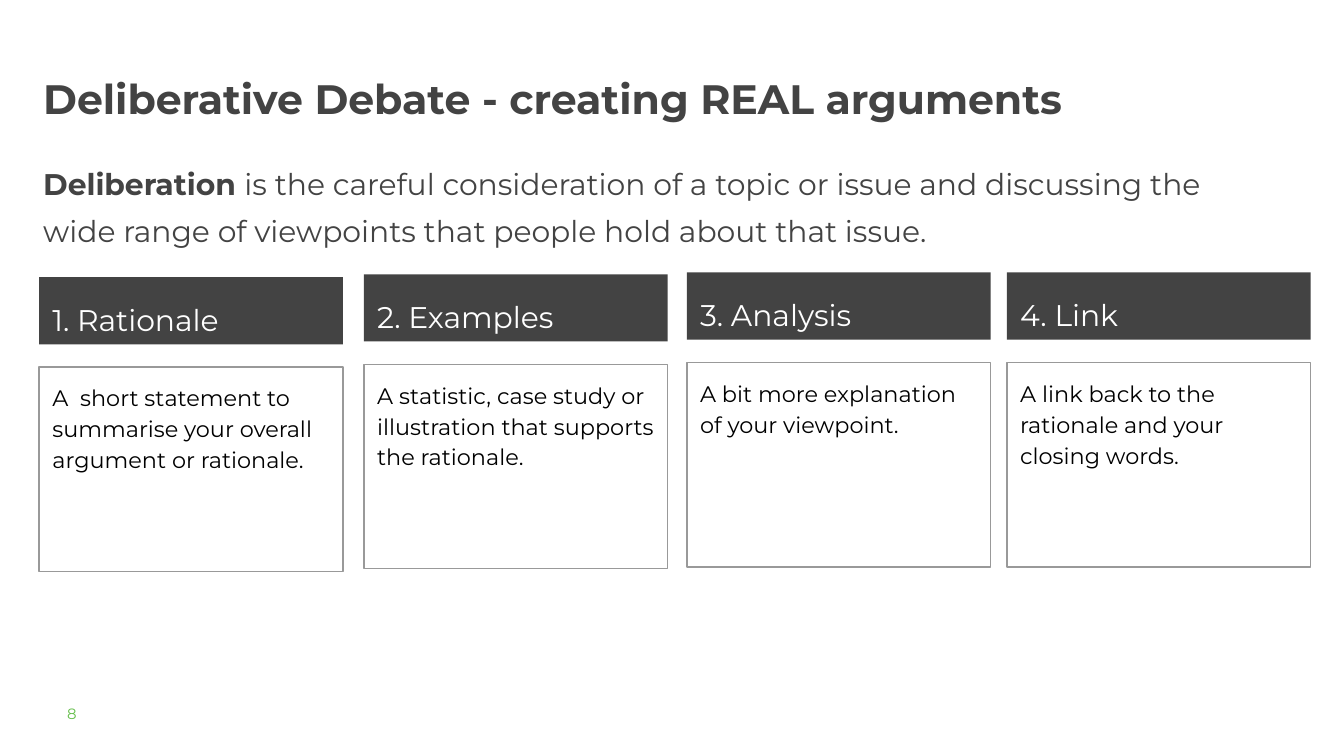
from dataclasses import dataclass

from pptx import Presentation
from pptx.dml.color import RGBColor
from pptx.enum.shapes import MSO_SHAPE
from pptx.enum.text import MSO_ANCHOR, PP_ALIGN
from pptx.util import Pt

RECTANGLE = MSO_SHAPE.RECTANGLE
TOP = MSO_ANCHOR.TOP
LEFT = PP_ALIGN.LEFT


@dataclass(frozen=True)
class Theme:
    font: str = "Montserrat"
    dark: str = "434343"
    white: str = "FFFFFF"
    black: str = "000000"
    border: str = "999999"
    accent: str = "65BE4B"
    title_size: float = 22
    lead_size: float = 16
    detail_size: float = 12
    number_size: float = 8


def write(frame, *runs, font, size, color, spacing=1.0, inset=0):
    """Fill the frame with one paragraph of (text, bold) runs."""
    frame.word_wrap = True
    frame.vertical_anchor = TOP
    frame.margin_left = frame.margin_right = Pt(inset)
    frame.margin_top = frame.margin_bottom = Pt(inset)
    paragraph = frame.paragraphs[0]
    paragraph.alignment = LEFT
    paragraph.line_spacing = spacing
    for text, bold in runs:
        run = paragraph.add_run()
        run.text = text
        run.font.name = font
        run.font.size = Pt(size)
        run.font.bold = bold
        run.font.color.rgb = RGBColor.from_string(color)


class SlideBuilder:
    def __init__(self, slide, theme):
        self.slide = slide
        self.theme = theme

    def text(self, box, *runs, **style):
        label = self.slide.shapes.add_textbox(*map(Pt, box))
        write(label.text_frame, *runs, font=self.theme.font, **style)

    def panel(self, box, text, fill=None, border=None, **style):
        panel = self.slide.shapes.add_shape(RECTANGLE, *map(Pt, box))
        panel.shadow.inherit = False
        if fill:
            panel.fill.solid()
            panel.fill.fore_color.rgb = RGBColor.from_string(fill)
        else:
            panel.fill.background()
        if border:
            panel.line.color.rgb = RGBColor.from_string(border)
            panel.line.width = Pt(0.75)
        else:
            panel.line.fill.background()
        write(panel.text_frame, (text, False), font=self.theme.font, inset=7.2, **style)

    def step(self, left, top, heading, detail):
        """Draw a dark heading bar with an outlined explanation below it."""
        theme = self.theme
        width = 162.7
        self.panel((left, top, width, 36), heading, fill=theme.dark,
                   size=theme.lead_size, color=theme.white, spacing=1.3)
        self.panel((left, top + 48.2, width, 109.5), detail, border=theme.border,
                   size=theme.detail_size, color=theme.black, spacing=1.15)


STEPS = [
    (21, 148.5, "1. Rationale",
     "A  short statement to summarise your overall argument or rationale."),
    (195, 147, "2. Examples",
     "A statistic, case study or illustration that supports the rationale."),
    (368, 146, "3. Analysis", "A bit more explanation of your viewpoint."),
    (539.5, 146, "4. Link", "A link back to the rationale and your closing words."),
]


def main():
    presentation = Presentation()
    presentation.slide_width = Pt(720)
    presentation.slide_height = Pt(405)
    slide = presentation.slides.add_slide(presentation.slide_layouts[6])
    theme = Theme()
    builder = SlideBuilder(slide, theme)

    builder.text((23.2, 35.5, 648, 64),
                 ("Deliberative Debate - creating REAL arguments", True),
                 size=theme.title_size, color=theme.dark, spacing=1.15)
    builder.text((23.2, 83, 648, 32),
                 ("Deliberation ", True),
                 ("is the careful consideration of a topic or issue and discussing "
                  "the wide range of viewpoints that people hold about that issue.", False),
                 size=theme.lead_size, color=theme.dark, spacing=1.3)
    for left, top, heading, detail in STEPS:
        builder.step(left, top, heading, detail)
    builder.text((36, 377.3, 57, 14.4), ("8", False),
                 size=theme.number_size, color=theme.accent)

    presentation.save("out.pptx")


if __name__ == "__main__":
    main()
